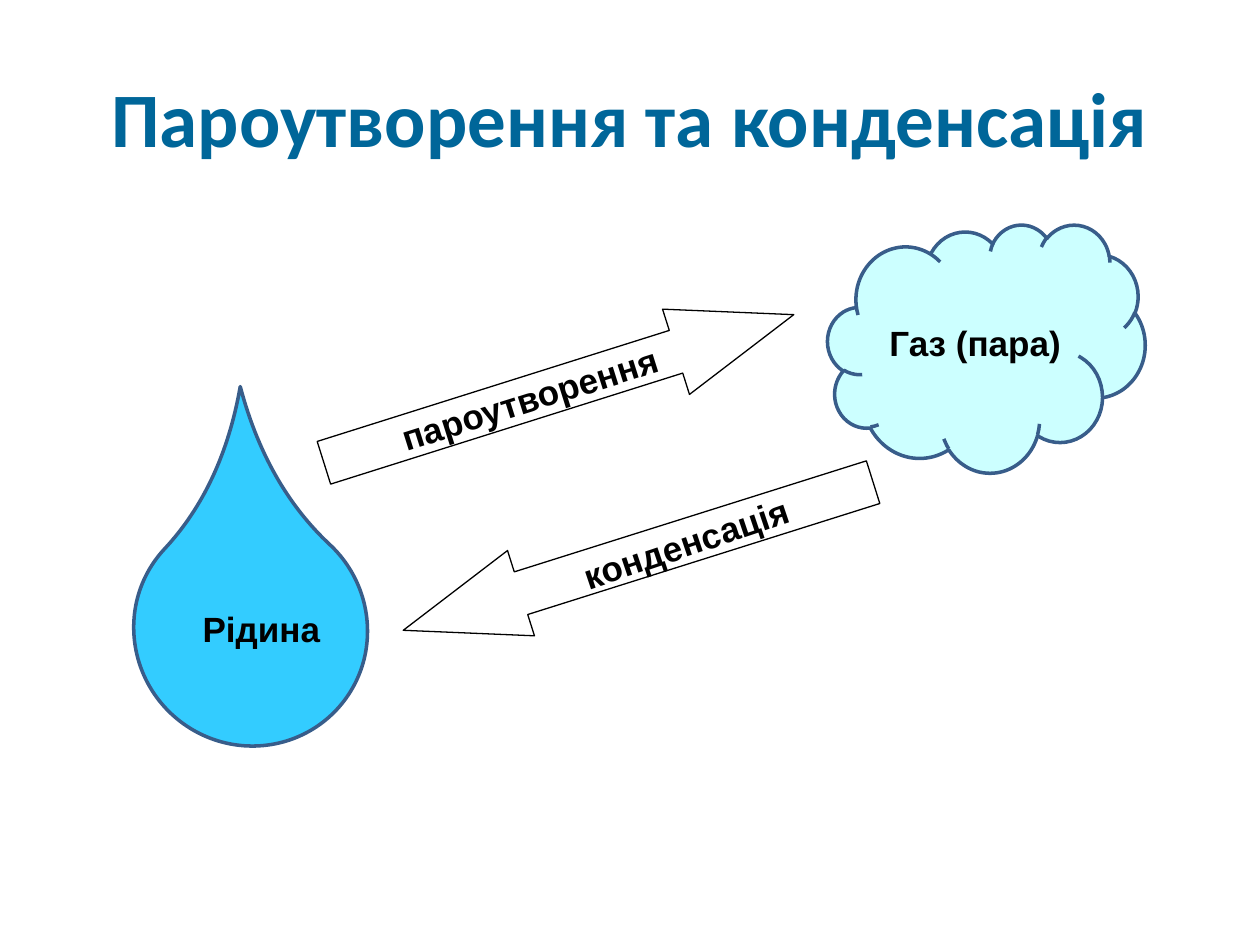
from pptx import Presentation
from pptx.dml.color import RGBColor as Rgb
from pptx.enum.shapes import MSO_SHAPE as Kind
from pptx.enum.text import MSO_ANCHOR as Anchor, PP_ALIGN as Align
from pptx.util import Pt

INK = {"title": "006699", "text": "000000", "drop": "33CCFF",
       "cloud": "CCFFFF", "edge": "385D8A"}


def write(frame, text, size=20, font="Arial", color="text",
          align=Align.CENTER, anchor=Anchor.MIDDLE, wrap=True):
    frame.word_wrap = wrap
    frame.vertical_anchor = anchor
    para = frame.paragraphs[0]
    para.alignment = align
    run = para.add_run()
    run.text = text
    run.font.size = Pt(size)
    run.font.name = font
    run.font.bold = True
    run.font.color.rgb = Rgb.from_string(INK[color])


class Deck:
    """Builds styled slides with all lengths in points."""

    def __init__(self, wide, high):
        self.show = Presentation()
        self.show.slide_width, self.show.slide_height = Pt(wide), Pt(high)
        self.slide = self.show.slides.add_slide(self.show.slide_layouts[5])

    def title(self, text, x, y, w, h):
        head = self.slide.shapes.title
        head.left, head.top, head.width, head.height = map(Pt, (x, y, w, h))
        write(head.text_frame, text, size=44, font="Calibri", color="title")

    def shape(self, kind, x, y, w, h, fill=None, line="edge", width=2,
              turn=0, bends=()):
        item = self.slide.shapes.add_shape(kind, *map(Pt, (x, y, w, h)))
        item.shadow.inherit = False
        item.rotation = turn
        for spot, bend in enumerate(bends):
            item.adjustments[spot] = bend
        if fill:
            item.fill.solid()
            item.fill.fore_color.rgb = Rgb.from_string(INK[fill])
        else:
            item.fill.background()
        item.line.color.rgb = Rgb.from_string(INK[line])
        item.line.width = Pt(width)
        return item

    def arrow(self, x, y, turn):
        return self.shape(Kind.RIGHT_ARROW, x, y, 281.5, 51.1, line="text",
                          width=0.75, turn=turn, bends=(0.5, 1.38))

    def label(self, text, x, y, w, h, turn=0, wrap=True):
        box = self.slide.shapes.add_textbox(*map(Pt, (x, y, w, h)))
        box.rotation = turn
        write(box.text_frame, text, align=Align.LEFT, anchor=Anchor.TOP,
              wrap=wrap)


def main():
    deck = Deck(720, 540)
    deck.title("Пароутворення та конденсація", 36, 21.6, 648, 90)
    deck.shape(Kind.TEAR, 77, 292.3, 132.5, 134.6, fill="drop", turn=313,
               bends=(1.47,))
    cloud = deck.shape(Kind.CLOUD, 473, 128.2, 181.4, 141.8, fill="cloud")
    write(cloud.text_frame, "Газ (пара)")
    rise = deck.arrow(178.6, 196.6, 342.5)
    write(rise.text_frame, "пароутворення", wrap=False)
    deck.label("Рідина", 108.7, 343.4, 81.4, 31, wrap=False)
    deck.arrow(223.9, 292.3, 162.5)
    deck.label("конденсація", 323.3, 292.3, 151.2, 31, turn=341.4)
    deck.show.save("out.pptx")


if __name__ == "__main__":
    main()
